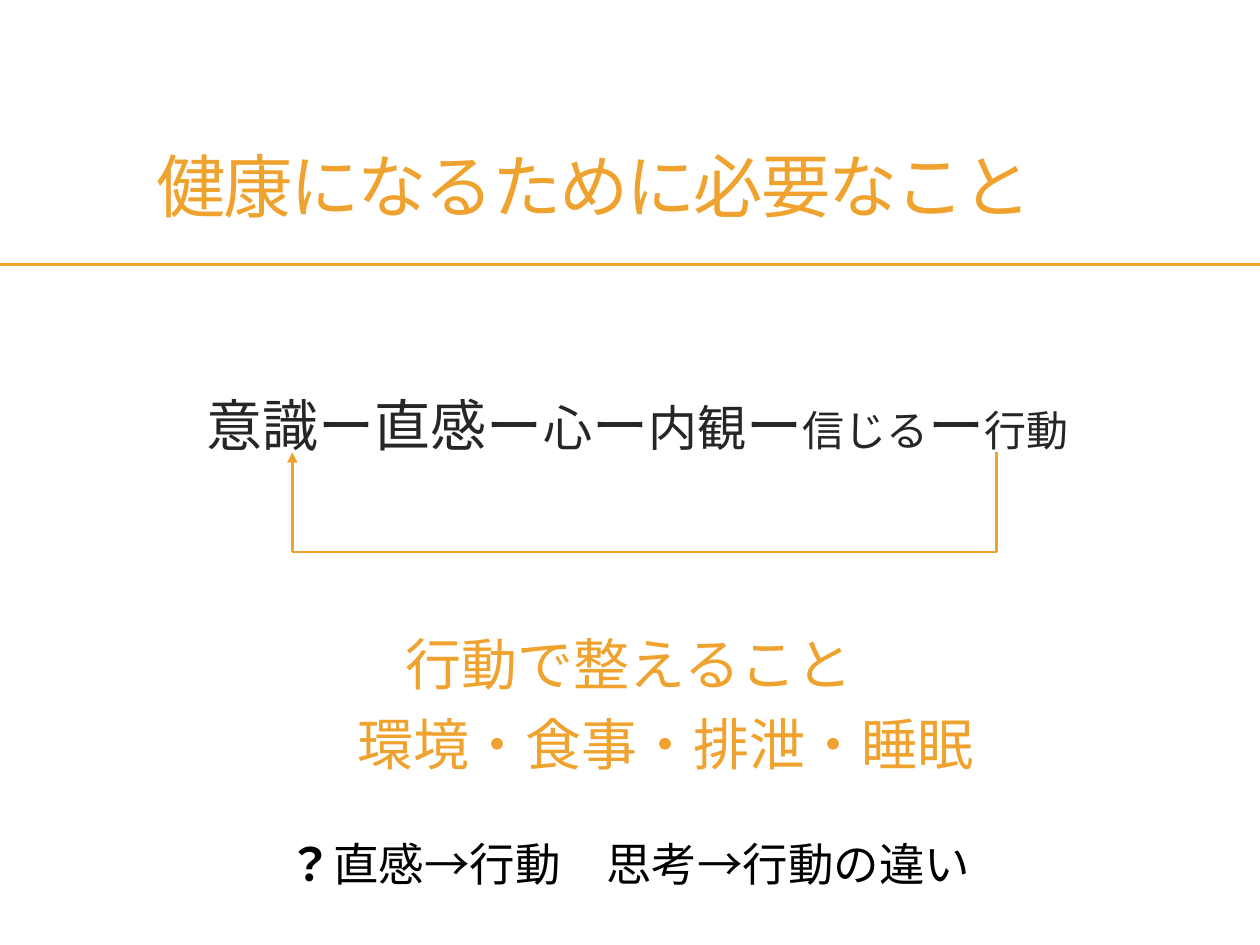
from lxml import etree
from pptx import Presentation
from pptx.dml.color import RGBColor
from pptx.enum.lang import MSO_LANGUAGE_ID
from pptx.enum.shapes import MSO_CONNECTOR
from pptx.enum.text import MSO_ANCHOR, PP_ALIGN
from pptx.oxml.ns import qn
from pptx.util import Inches, Pt

STRAIGHT = MSO_CONNECTOR.STRAIGHT
TOP, MIDDLE = MSO_ANCHOR.TOP, MSO_ANCHOR.MIDDLE
LEFT, CENTER = PP_ALIGN.LEFT, PP_ALIGN.CENTER
JAPANESE = MSO_LANGUAGE_ID.JAPANESE
FONT = "Noto Sans CJK JP"
COLORS = {"accent": "F0A22E", "dark": "262626", "black": "000000"}


class SlideBuilder:
    def __init__(self, page):
        self.page = page

    def text_box(self, left, top, width, height, anchor, inset_top=0.05):
        box = self.page.shapes.add_textbox(
            Inches(left), Inches(top), Inches(width), Inches(height))
        frame = box.text_frame
        frame.word_wrap = True
        frame.vertical_anchor = anchor
        frame.margin_top = Inches(inset_top)
        return frame

    def paragraph(self, para, spans, color, align=CENTER, spacing=0.85,
                  before=0, indent=0, tracking=0):
        para.alignment = align
        para.line_spacing = spacing
        para.space_before = Pt(before)
        if indent:
            para._p.get_or_add_pPr().set("marL", str(Inches(indent)))
        for text, size, bold in spans:
            span = para.add_run()
            span.text = text
            span.font.size = Pt(size)
            span.font.bold = bold
            span.font.name = FONT
            span.font.language_id = JAPANESE
            span.font.color.rgb = RGBColor.from_string(COLORS[color])
            properties = span._r.get_or_add_rPr()
            etree.SubElement(properties, qn("a:ea")).set("typeface", FONT)
            if tracking:
                properties.set("spc", str(int(tracking * 100)))

    def line(self, start, end, arrow=False):
        line = self.page.shapes.add_connector(
            STRAIGHT, *(Inches(value) for value in (*start, *end)))
        line.line.color.rgb = RGBColor.from_string(COLORS["accent"])
        line.line.width = Pt(1.5)
        if arrow:
            outline = line.line._get_or_add_ln()
            etree.SubElement(outline, qn("a:tailEnd")).set("type", "triangle")
        etree.SubElement(line._element.spPr, qn("a:effectLst"))


def main():
    deck = Presentation()
    deck.slide_width, deck.slide_height = Inches(10), Inches(7.5)
    builder = SlideBuilder(deck.slides.add_slide(deck.slide_layouts[6]))

    # Title
    title = builder.text_box(1.14, 1.11, 7.72, 0.8, MIDDLE)
    builder.paragraph(title.paragraphs[0],
                      [("健康になるために必要なこと", 39.6, False)],
                      "accent", align=LEFT, spacing=0.9, tracking=-1.2)

    # Body: chain of steps, actions, closing question
    chain = [("意識ー直感ー", 32, False), ("心", 28, False),
             ("ー", 32, False), ("内観", 28, False), ("ー", 32, False),
             ("信じる", 24, False), ("ー", 32, False), ("行動", 24, False)]
    question = [("？", 26, True), ("直感→行動　思考→行動の違い", 26, False)]
    body = builder.text_box(0.98, 2.41, 8.03, 4.72, TOP, inset_top=0.77)
    builder.paragraph(body.paragraphs[0], chain, "dark", indent=0.13)
    for spans, color, before, indent in [
        ([("行動で整えること", 32, False)], "accent", 104, 0),
        ([("　環境・食事・排泄・睡眠", 32, False)], "accent", 13, 0.13),
        (question, "black", 38.6, 0),
    ]:
        builder.paragraph(body.add_paragraph(), spans, color,
                          before=before, indent=indent)

    # Rule under the title
    builder.line((0, 2.1), (10, 2.1))

    # Feedback path from the last step back to the first
    first, last, upper, lower = 2.32, 7.91, 3.59, 4.38
    corners = [(last, upper), (last, lower), (first, lower), (first, upper)]
    for start, end in zip(corners, corners[1:]):
        builder.line(start, end, arrow=end == corners[-1])

    deck.save("out.pptx")


if __name__ == "__main__":
    main()
